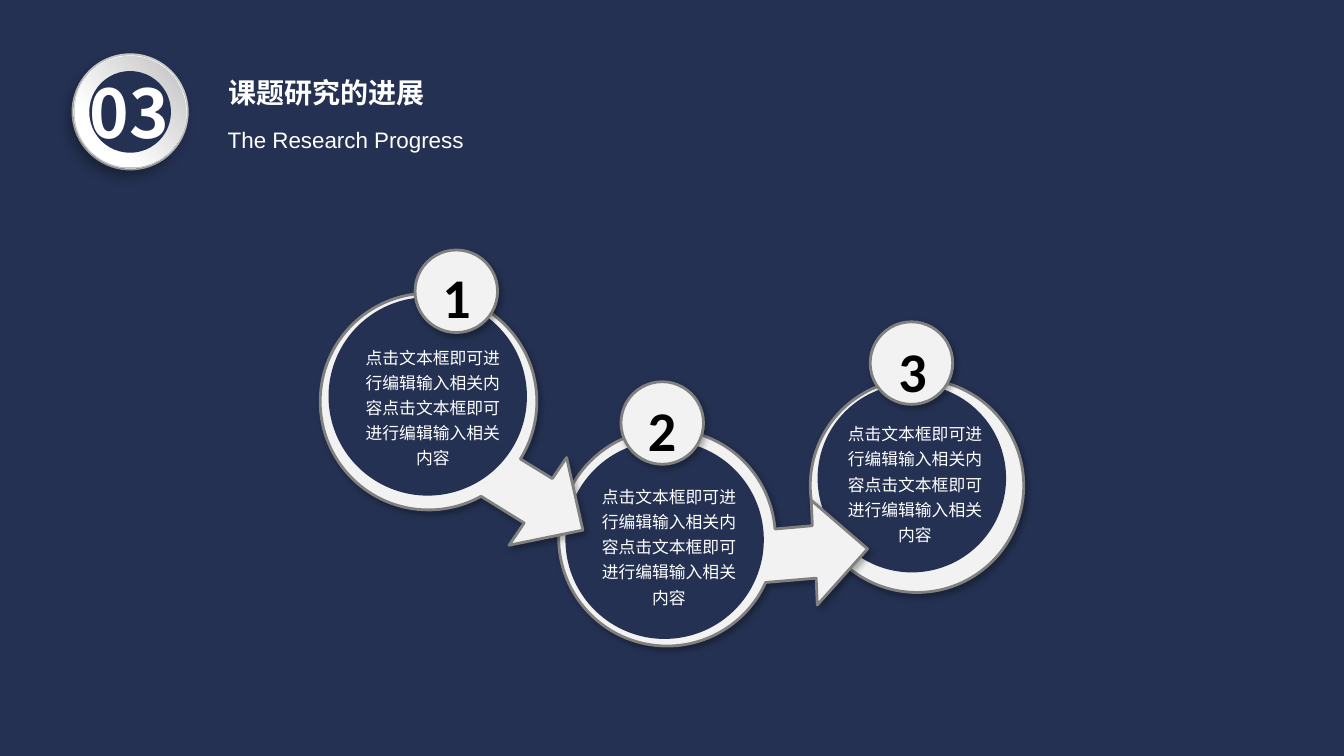
"""Build the research progress slide: a numbered heading and three linked circles."""
import math

from lxml import etree
from pptx import Presentation
from pptx import util as u
from pptx.dml.color import RGBColor
from pptx.enum import shapes, text
from pptx.oxml.ns import qn

NAVY = RGBColor(0x24, 0x31, 0x52)
PALE = RGBColor(0xF2, 0xF2, 0xF2)
GREY = RGBColor(0x80, 0x80, 0x80)
RIM = RGBColor(0xD3, 0xD3, 0xD3)
SILVER = RGBColor(0xB8, 0xB8, 0xB8)
LIGHT_SILVER = RGBColor(0xBF, 0xBF, 0xBF)
WHITE = RGBColor(0xFF, 0xFF, 0xFF)
BLACK = RGBColor(0x00, 0x00, 0x00)
CHINESE_FONT = "Noto Sans CJK SC"
CAPTION = "点击文本框即可进行编辑输入相关内容" * 2

presentation = Presentation()
presentation.slide_width = u.Cm(33.87)
presentation.slide_height = u.Cm(19.05)
slide = presentation.slides.add_slide(presentation.slide_layouts[6])
slide.background.fill.solid()
slide.background.fill.fore_color.rgb = NAVY


def add_disc(center, diameter, color):
    x, y = center
    shape = slide.shapes.add_shape(
        shapes.MSO_SHAPE.OVAL, u.Cm(x - diameter / 2), u.Cm(y - diameter / 2),
        u.Cm(diameter), u.Cm(diameter))
    shape.fill.solid()
    shape.fill.fore_color.rgb = color
    shape.line.fill.background()
    shape.shadow.inherit = False
    return shape


def cast_shadow(shape, opacity, blur, distance, angle):
    shape.shadow.inherit = False
    effects = shape._element.spPr.find(qn("a:effectLst"))
    shadow = etree.SubElement(
        effects, qn("a:outerShdw"), blurRad=str(u.Pt(blur)), dist=str(u.Pt(distance)),
        dir=str(angle * 60000), algn="ctr", rotWithShape="0")
    color = etree.SubElement(shadow, qn("a:srgbClr"), val=str(BLACK))
    etree.SubElement(color, qn("a:alpha"), val=str(opacity * 1000))


# center, inner center, inner diameter, badge center, arrow turn in degrees
steps = [
    ((23.11, 12.24), (22.98, 12.05), 4.75, (22.97, 9.15), None),
    ((16.81, 13.55), (16.75, 13.6), 5, (16.69, 10.66), -36.6),
    ((10.8, 10.12), (10.78, 9.99), 5, (11.5, 7.34), 0),
]
RADIUS = 2.73
ARROW_START, ARROW_END = 32, 61
ARROW = [(3.12, 1.94), (3.48, 1.41), (3.89, 3.24), (2.03, 3.62), (2.41, 3.06)]
ARC_ANGLES = [-90, 0, ARROW_START, ARROW_END, 90, 180, 270]
rim = [(RADIUS * math.cos(math.radians(angle)), RADIUS * math.sin(math.radians(angle)))
       for angle in ARC_ANGLES]
outline = rim[:3] + ARROW + rim[3:]
outline_angles = ARC_ANGLES[:3] + [None] * len(ARROW) + ARC_ANGLES[3:]

for center, inner_center, inner_diameter, badge_center, turn in steps:
    if turn is None:
        ring = add_disc(center, 5.38, PALE)
    else:
        builder = slide.shapes.build_freeform(u.Cm(0), u.Cm(-RADIUS))
        builder.add_line_segments([(u.Cm(x), u.Cm(y)) for x, y in outline[1:]], close=True)
        ring = builder.convert_to_shape()
        segments = list(ring._element.spPr.iter(qn("a:lnTo")))
        for segment, start, end in zip(segments, outline_angles, outline_angles[1:]):
            if start is None or end is None:
                continue
            bend = 4 / 3 * math.tan(math.radians(end - start) / 4)
            segment.tag = qn("a:cubicBezTo")
            for position, (angle, pull) in enumerate([(start, bend), (end, -bend)]):
                cosine, sine = math.cos(math.radians(angle)), math.sin(math.radians(angle))
                control = etree.Element(
                    qn("a:pt"),
                    x=str(u.Cm(RADIUS * (cosine - pull * sine + 1))),
                    y=str(u.Cm(RADIUS * (sine + pull * cosine + 1))))
                segment.insert(position, control)
        middle_x, middle_y = (3.89 - RADIUS) / 2, (3.62 - RADIUS) / 2
        cosine, sine = math.cos(math.radians(turn)), math.sin(math.radians(turn))
        ring.left = u.Cm(center[0] + middle_x * cosine - middle_y * sine) - ring.width // 2
        ring.top = u.Cm(center[1] + middle_x * sine + middle_y * cosine) - ring.height // 2
        ring.rotation = turn
        ring.fill.solid()
        ring.fill.fore_color.rgb = PALE
    inner = add_disc(inner_center, inner_diameter, NAVY)
    inner.rotation = turn or 0
    badge = add_disc(badge_center, 2.08, PALE)
    for shape in (ring, badge):
        shape.line.color.rgb = GREY
        shape.line.width = u.Pt(2)
        cast_shadow(shape, 30, 4.5, 2.6, 53)

heading_center = (3.28, 2.82)
add_disc(heading_center, 2.95, RIM)
for diameter, rotation, start, end, end_color in [
        (2.84, 152.3, 0.17, 0.88, SILVER), (2.8, 3, 0.29, 0.98, LIGHT_SILVER)]:
    ring = add_disc(heading_center, diameter, WHITE)
    ring.rotation = rotation
    ring.fill.gradient()
    ring.fill.gradient_angle = 45
    for stop, position, color in zip(ring.fill.gradient_stops, (start, end), (WHITE, end_color)):
        stop.position = position
        stop.color.rgb = color
    if end_color == SILVER:
        cast_shadow(ring, 39, 10, 5, 123)
add_disc(heading_center, 2.06, NAVY)

subtitle = slide.shapes.add_shape(
    shapes.MSO_SHAPE.SNIP_1_RECTANGLE, u.Cm(5.49), u.Cm(3.06), u.Cm(13.94), u.Cm(0.94))
subtitle.adjustments[0] = 0
subtitle.fill.background()
subtitle.line.fill.background()
subtitle.shadow.inherit = False

CENTER, LEFT = text.PP_ALIGN.CENTER, text.PP_ALIGN.LEFT
number_style = (1.93, 2.51, 40, "Calibri", BLACK, True, CENTER, 1.3)
caption_style = (4.04, 3.45, 12, CHINESE_FONT, WHITE, False, CENTER, 1.25)
labels = [
    ("2", 15.72, 9.33, *number_style),
    ("3", 22.03, 7.85, *number_style),
    ("1", 10.54, 5.98, *number_style),
    (CAPTION, 8.89, 8.5, *caption_style),
    (CAPTION, 14.84, 12.01, *caption_style),
    (CAPTION, 21.04, 10.43, *caption_style),
    ("03", 1.5, 1.68, 3.53, 2.31, 48, CHINESE_FONT, WHITE, True, CENTER, 1),
    ("课题研究的进展", 5.5, 1.78, 13.77, 1.12, 20, CHINESE_FONT, WHITE, True, LEFT, 1),
    ("The Research Progress", 5.49, 3.06, 13.94, 0.94, 16, "Arial", WHITE, False, LEFT, 1),
]
for words, left, top, width, height, size, font_name, color, bold, alignment, spacing in labels:
    if font_name == "Arial":
        box = subtitle
    else:
        box = slide.shapes.add_textbox(u.Cm(left), u.Cm(top), u.Cm(width), u.Cm(height))
    box.text_frame.word_wrap = True
    box.text_frame.auto_size = text.MSO_AUTO_SIZE.SHAPE_TO_FIT_TEXT
    box.text_frame.vertical_anchor = text.MSO_ANCHOR.TOP
    box.text_frame.text = words
    paragraph = box.text_frame.paragraphs[0]
    paragraph.alignment = alignment
    paragraph.line_spacing = spacing
    font = paragraph.runs[0].font
    font.size = u.Pt(size)
    font.bold = bold
    font.color.rgb = color
    font.name = font_name
    etree.SubElement(paragraph.runs[0]._r.rPr, qn("a:ea"), typeface=font_name)

presentation.save("out.pptx")
